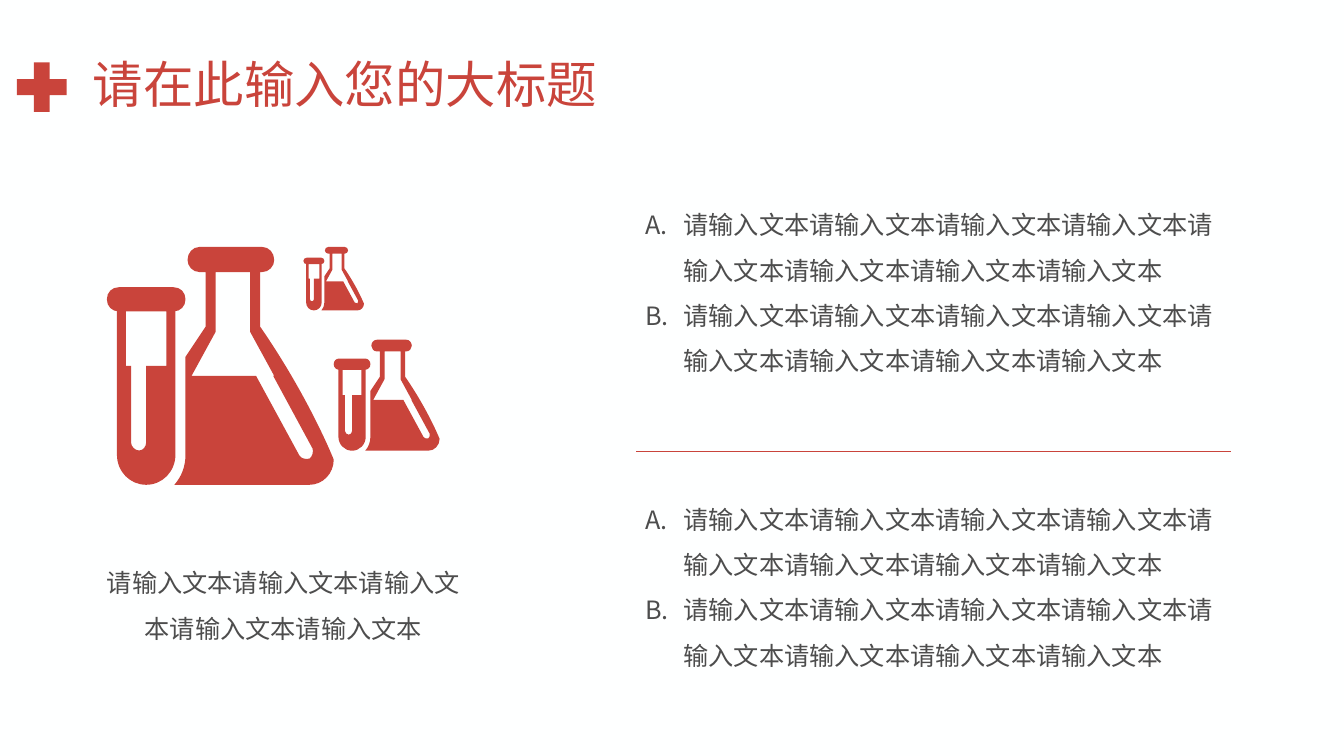
from dataclasses import dataclass

from lxml.etree import SubElement
from pptx import Presentation
from pptx.dml.color import RGBColor
from pptx.enum.shapes import MSO_CONNECTOR, MSO_SHAPE
from pptx.enum.text import MSO_ANCHOR, PP_ALIGN
from pptx.oxml import parse_xml
from pptx.oxml.ns import nsdecls, qn
from pptx.util import Inches, Pt


@dataclass(frozen=True)
class Theme:
    accent = RGBColor.from_string("C9443B")
    body = RGBColor.from_string("4D4D4D")
    background = RGBColor.from_string("FEFFFF")
    font = "Noto Sans CJK SC"
    title_size = Pt(36)
    body_size = Pt(18)
    rule_width = Pt(0.5)


THEME = Theme()
WIDTH, HEIGHT = 13.33, 7.5
PHRASE = "请输入文本"

TITLE = "请在此输入您的大标题"
CAPTION = PHRASE * 5
LIST_ITEMS = [PHRASE * 8] * 2

# Columns and rows of the layout, in inches
TITLE_BOX = (0.82, 0.4, 11.68, 0.93)
PLUS_BOX = (0.08, 0.53, 0.67, 0.67)
CAPTION_BOX = (0.93, 5.35, 3.76, 1.16)
LIST_LEFT, LIST_WIDTH, LIST_HEIGHT = 6.3, 5.87, 2.28
LIST_TOPS = [1.88, 4.8]
LIST_INDENT = 0.38
RULE_LEFT, RULE_Y, RULE_LENGTH = 6.31, 4.48, 5.9
ICONS = [(1.06, 2.45, 2.25), (3.01, 2.45, 0.6), (3.31, 3.37, 1.05)]  # left, top, width

# Glassware on a grid 225 wide: pairs are corners, sixes are cubic curves
GRID_WIDTH = 225
FLASK = [
    (152, 79), (152, 25), (154, 25),
    (161, 25, 166, 19, 166, 13), (166, 6, 161, 0, 154, 0), (92, 0),
    (85, 0, 80, 6, 80, 13), (80, 19, 85, 25, 92, 25),
    (98, 25), (98, 79), (78, 109), (78, 206),
    (78, 218, 74, 228, 67, 236), (201, 236),
    (214, 236, 225, 225, 225, 211), (225, 211, 201, 150, 152, 79),
]
FLASK_HOLLOW = [
    (201, 210), (197, 211, 193, 210, 191, 207),
    (148, 128), (84, 128), (108, 84), (108, 25), (142, 25), (142, 84),
    (166, 128), (165, 128), (204, 200), (205, 203, 204, 208, 201, 210),
]
TUBE = [
    (68, 64), (66, 64),
    (73, 64, 78, 59, 78, 52), (78, 45, 73, 40, 66, 40), (12, 40),
    (5, 40, 0, 45, 0, 52), (0, 59, 5, 64, 12, 64),
    (10, 64), (10, 206),
    (10, 223, 23, 236, 39, 236), (55, 236, 68, 223, 68, 206),
]
TUBE_HOLLOW = [
    (59, 118), (39, 118), (39, 194),
    (39, 198, 36, 202, 32, 202), (28, 202, 24, 198, 24, 194),
    (24, 118), (19, 118), (19, 64), (59, 64),
]
GLASSWARE = [FLASK, FLASK_HOLLOW, TUBE, TUBE_HOLLOW]


def paint(shape, color):
    shape.fill.solid()
    shape.fill.fore_color.rgb = color
    shape.line.fill.background()
    shape.shadow.inherit = False


def bend(segment, part):
    """Turn a straight freeform segment into the cubic curve given by part."""
    segment.tag = qn("a:cubicBezTo")
    end = segment[0]
    for x, y in (part[:2], part[2:4]):
        control = parse_xml(f'<a:pt {nsdecls("a")} x="{x}" y="{y}"/>')
        end.addprevious(control)


def add_glassware(slide, left, top, width):
    scale = Inches(width) / GRID_WIDTH
    builder = slide.shapes.build_freeform(*GLASSWARE[0][0], scale=scale)
    for index, outline in enumerate(GLASSWARE):
        if index:
            builder.move_to(*outline[0])
        builder.add_line_segments([part[-2:] for part in outline[1:]], close=True)
    shape = builder.convert_to_shape(Inches(left), Inches(top))
    paint(shape, THEME.accent)

    parts = [part for outline in GLASSWARE for part in outline[1:]]
    segments = list(shape._element.iter(qn("a:lnTo")))
    for segment, part in zip(segments, parts):
        if len(part) == 6:
            bend(segment, part)


def style(paragraph, size, color, line_spacing, alignment=PP_ALIGN.LEFT):
    paragraph.alignment = alignment
    paragraph.line_spacing = line_spacing
    font = paragraph.font
    font.size, font.name, font.color.rgb = size, THEME.font, color
    properties = paragraph._p.get_or_add_pPr().find(qn("a:defRPr"))
    SubElement(properties, qn("a:ea")).set("typeface", THEME.font)


def letter(paragraph):
    """Number the paragraph A., B., ... with a hanging indent."""
    properties = paragraph._p.get_or_add_pPr()
    properties.set("marL", str(Inches(LIST_INDENT)))
    properties.set("indent", str(-Inches(LIST_INDENT)))
    numbering = parse_xml(f'<a:buAutoNum {nsdecls("a")} type="alphaUcPeriod"/>')
    properties.find(qn("a:defRPr")).addprevious(numbering)


def add_text(slide, box, lines, alignment=PP_ALIGN.LEFT, anchor=MSO_ANCHOR.TOP):
    frame = slide.shapes.add_textbox(*map(Inches, box)).text_frame
    frame.word_wrap = True
    frame.vertical_anchor = anchor
    frame.text = "\n".join(lines)
    for paragraph in frame.paragraphs:
        style(paragraph, THEME.body_size, THEME.body, 1.5, alignment)
    return frame


def add_title(slide):
    title = slide.shapes.title
    title.left, title.top, title.width, title.height = map(Inches, TITLE_BOX)
    title.text_frame.text = TITLE
    title.text_frame.vertical_anchor = MSO_ANCHOR.MIDDLE
    style(title.text_frame.paragraphs[0], THEME.title_size, THEME.accent, 0.9)


def add_backdrop(slide):
    """Put a full-slide panel behind everything else."""
    panel = slide.shapes.add_shape(MSO_SHAPE.RECTANGLE, 0, 0, Inches(WIDTH), Inches(HEIGHT))
    paint(panel, THEME.background)
    slide.shapes.title._element.addprevious(panel._element)


def add_rule(slide):
    ends = (RULE_LEFT, RULE_Y, RULE_LEFT + RULE_LENGTH, RULE_Y)
    rule = slide.shapes.add_connector(MSO_CONNECTOR.STRAIGHT, *map(Inches, ends))
    rule.line.color.rgb = THEME.accent
    rule.line.width = THEME.rule_width
    SubElement(rule._element.spPr, qn("a:effectLst"))


def main():
    presentation = Presentation()
    presentation.slide_width, presentation.slide_height = Inches(WIDTH), Inches(HEIGHT)
    slide = presentation.slides.add_slide(presentation.slide_layouts[5])

    add_backdrop(slide)
    plus = slide.shapes.add_shape(MSO_SHAPE.MATH_PLUS, *map(Inches, PLUS_BOX))
    paint(plus, THEME.accent)
    add_title(slide)
    for icon in ICONS:
        add_glassware(slide, *icon)
    add_text(slide, CAPTION_BOX, [CAPTION], PP_ALIGN.CENTER, MSO_ANCHOR.MIDDLE)
    for top in LIST_TOPS:
        frame = add_text(slide, (LIST_LEFT, top, LIST_WIDTH, LIST_HEIGHT), LIST_ITEMS)
        for paragraph in frame.paragraphs:
            letter(paragraph)
    add_rule(slide)
    presentation.save("out.pptx")


if __name__ == "__main__":
    main()
